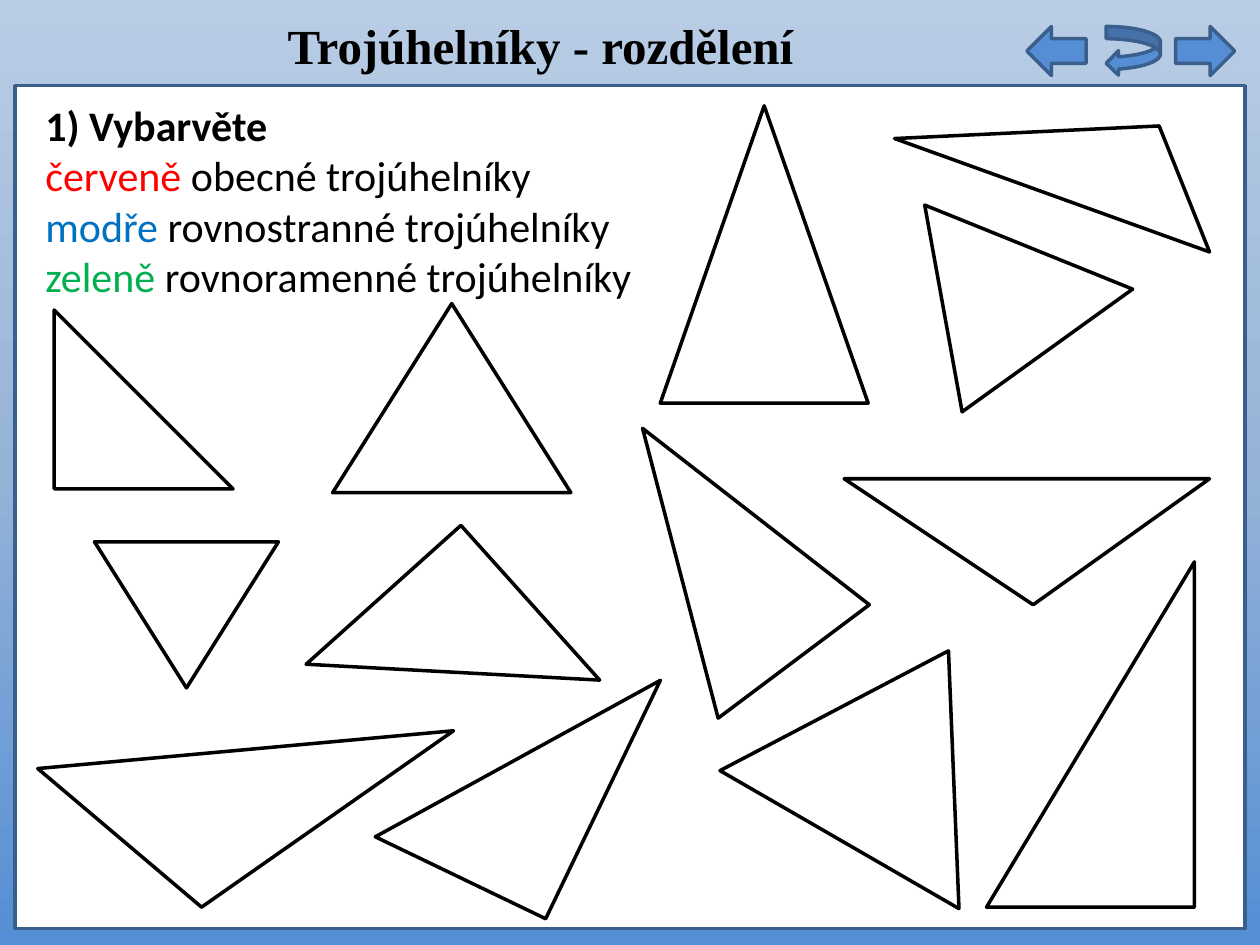
from copy import deepcopy

from pptx import Presentation
from pptx.dml.color import RGBColor
from pptx.enum.shapes import MSO_SHAPE
from pptx.enum.text import MSO_ANCHOR, PP_ALIGN
from pptx.oxml.ns import qn
from pptx.util import Inches, Pt

RECT = MSO_SHAPE.RECTANGLE
ARROW = MSO_SHAPE.RIGHT_ARROW
CURVE = MSO_SHAPE.CURVED_LEFT_ARROW
PEAK = MSO_SHAPE.ISOSCELES_TRIANGLE
RIGHT = MSO_SHAPE.RIGHT_TRIANGLE
TOP, MIDDLE = MSO_ANCHOR.TOP, MSO_ANCHOR.MIDDLE
CENTER, LEFT = PP_ALIGN.CENTER, PP_ALIGN.LEFT

BLACK = RGBColor(0x00, 0x00, 0x00)
WHITE = RGBColor(0xFF, 0xFF, 0xFF)
RED = RGBColor(0xFF, 0x00, 0x00)
BLUE = RGBColor(0x00, 0x70, 0xC0)
GREEN = RGBColor(0x00, 0xB0, 0x50)
NAVY = RGBColor(0x3A, 0x5F, 0x8C)
PALE = RGBColor(0xB9, 0xCD, 0xE5)
MID = RGBColor(0x95, 0xB3, 0xD7)
DEEP = RGBColor(0x55, 0x8E, 0xD5)

deck = Presentation()
deck.slide_width, deck.slide_height = Inches(10), Inches(7.5)
COL, ROW = deck.slide_width // 100, deck.slide_height // 75
slide = deck.slides.add_slide(deck.slide_layouts[5])
shapes = slide.shapes


def grid(x, y, w, h):
    return [int(x * COL), int(y * ROW), int(w * COL), int(h * ROW)]


def style(shape, fill, line, turn=0, flip=None):
    shape.shadow.inherit = False
    if fill is None:
        shape.fill.background()
    else:
        shape.fill.solid()
        shape.fill.fore_color.rgb = fill
    shape.line.color.rgb = line
    shape.line.width = Pt(2)
    shape.rotation = turn
    if flip:
        shape.element.spPr.find(qn("a:xfrm")).set(flip, "1")


back = slide.background.fill
back.gradient()
back.gradient_angle = 270
stops = next(slide.element.iter(qn("a:gsLst")))
stops.append(deepcopy(stops[-1]))
for stop, tint, place in zip(back.gradient_stops, (PALE, MID, DEEP), (0, 0.5, 1)):
    stop.color.rgb = tint
    stop.position = place

panel = shapes.add_shape(RECT, *grid(1.2, 6.8, 97.6, 66.9))
style(panel, WHITE, NAVY)
for kind, x, w, flip in (
    (ARROW, 93.3, 4.7, None),
    (ARROW, 81.5, 4.7, "flipH"),
    (CURVE, 87.8, 4.3, None),
):
    style(shapes.add_shape(kind, *grid(x, 2.1, w, 3.9)), DEEP, NAVY, 0, flip)

head = shapes.add_textbox(*grid(0.3, -0.3, 85.2, 7.7)).text_frame
head.word_wrap = True
head.vertical_anchor = MIDDLE
line = head.paragraphs[0]
line.text = "Trojúhelníky - rozdělení"
line.alignment = CENTER
font = line.runs[0].font
font.name, font.size, font.bold = "Times New Roman", Pt(28), True
font.color.rgb = BLACK

title = shapes.title
title.left, title.top, title.width, title.height = grid(2.6, 7.4, 98.6, 19.9)
shapes.element.append(title.element)
title.text_frame.word_wrap = True
title.text_frame.vertical_anchor = TOP
task = title.text_frame.paragraphs[0]
task.text = "1) Vybarvěte "
task.alignment = LEFT
tints = [BLACK]
for word, rest, tint in (
    ("červeně", " obecné trojúhelníky", RED),
    ("modře", " rovnostranné trojúhelníky", BLUE),
    ("zeleně", " rovnoramenné trojúhelníky", GREEN),
):
    task.add_line_break()
    task.add_run().text = word
    task.add_run().text = rest
    tints += [tint, BLACK]
for spot, (run, tint) in enumerate(zip(task.runs, tints)):
    run.font.name, run.font.size = "Calibri", Pt(24)
    run.font.bold = spot == 0
    run.font.color.rgb = tint

for kind, box, turn, flip in (
    (RIGHT, (4.3, 24.6, 14.2, 14.2), 0, None),
    (PEAK, (26.4, 24.1, 18.9, 15), 0, None),
    (RIGHT, (27.7, 45.1, 16.5, 16.5), 138.1, None),
    (RIGHT, (78.3, 44.6, 16.5, 27.4), 0, "flipH"),
    (PEAK, (52.4, 8.4, 16.5, 23.6), 0, None),
    (RIGHT, (33.6, 49.7, 15, 21), 205.7, "flipV"),
    (PEAK, (7.5, 43, 14.6, 11.6), 180, None),
    (PEAK, (60, 50.5, 21.9, 17.3), 30, None),
    (PEAK, (70.1, 19.1, 17.8, 14.1), 202, None),
):
    style(shapes.add_shape(kind, *grid(*box)), None, BLACK, turn, flip)

for first, *others in (
    ((71.3, 10.9), (92.4, 9.9), (96.5, 20.2)),
    ((96.3, 37.5), (81.9, 47.5), (67.3, 37.5)),
    ((69.3, 47.8), (57, 57.3), (51.2, 33.6)),
    ((3.3, 60.8), (35.8, 57.9), (15.7, 71.5)),
):
    pen = shapes.build_freeform(*first, scale=(COL, ROW))
    pen.add_line_segments(others, close=True)
    style(pen.convert_to_shape(), None, BLACK)

deck.save("out.pptx")
